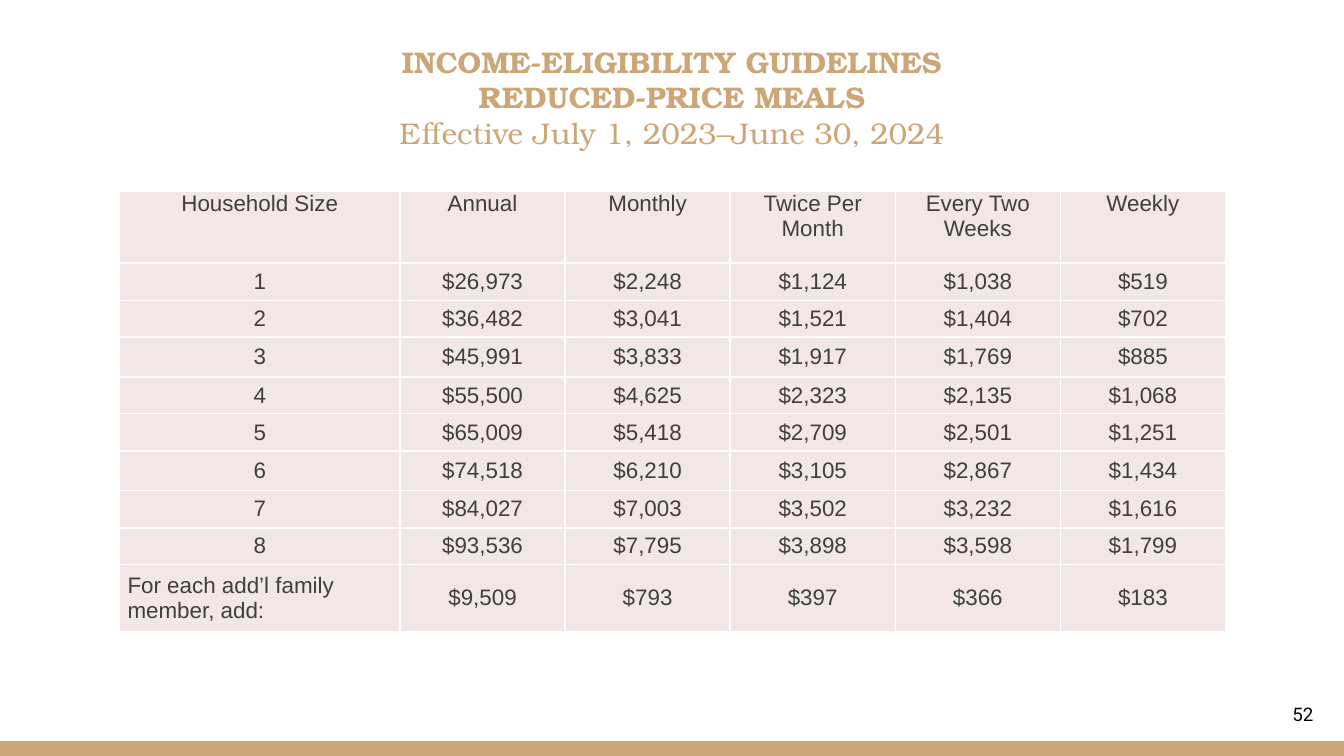
from lxml.etree import SubElement
from pptx import Presentation
from pptx.dml.color import RGBColor
from pptx.enum.shapes import MSO_SHAPE
from pptx.enum.text import MSO_ANCHOR, MSO_AUTO_SIZE, PP_ALIGN
from pptx.oxml.ns import qn
from pptx.util import Cm, Pt

GOLD, BLUSH, CHARCOAL, WHITE, BLACK = "CCA677", "F3E6E6", "3F3F3F", "FFFFFF", "000000"

TITLE = [
    ("INCOME-ELIGIBILITY GUIDELINES", True),
    ("REDUCED-PRICE MEALS", True),
    ("Effective July 1, 2023–June 30, 2024", False),
]
GUIDELINES = [
    ["Household Size", "Annual", "Monthly", "Twice Per Month", "Every Two Weeks", "Weekly"],
    ["1", "$26,973", "$2,248", "$1,124", "$1,038", "$519"],
    ["2", "$36,482", "$3,041", "$1,521", "$1,404", "$702"],
    ["3", "$45,991", "$3,833", "$1,917", "$1,769", "$885"],
    ["4", "$55,500", "$4,625", "$2,323", "$2,135", "$1,068"],
    ["5", "$65,009", "$5,418", "$2,709", "$2,501", "$1,251"],
    ["6", "$74,518", "$6,210", "$3,105", "$2,867", "$1,434"],
    ["7", "$84,027", "$7,003", "$3,502", "$3,232", "$1,616"],
    ["8", "$93,536", "$7,795", "$3,898", "$3,598", "$1,799"],
    ["For each add’l family member, add:", "$9,509", "$793", "$397", "$366", "$183"],
]
COLUMN_WIDTHS = [5.3] + [3.12] * 5
ROW_HEIGHTS = [1.35, 0.71, 0.69, 0.76, 0.69, 0.71, 0.74, 0.71, 0.69, 1.27]


def color(hex_string):
    return RGBColor.from_string(hex_string)


def style_paragraph(paragraph, font, size, hex_string, align, bold=False):
    paragraph.alignment = align
    paragraph.font.name = font
    paragraph.font.size = Pt(size)
    paragraph.font.bold = bold
    paragraph.font.color.rgb = color(hex_string)


def set_margins(holder, left, top, right, bottom):
    holder.margin_left, holder.margin_top = Cm(left), Cm(top)
    holder.margin_right, holder.margin_bottom = Cm(right), Cm(bottom)


def add_footer_band(slide, width):
    band = slide.shapes.add_shape(MSO_SHAPE.RECTANGLE, 0, Cm(14.01), width, Cm(0.28))
    band.shadow.inherit = False
    band.fill.solid()
    band.fill.fore_color.rgb = color(GOLD)
    band.line.fill.background()


def fill_title(slide):
    title = slide.shapes.title
    title.left, title.top, title.width, title.height = Cm(3.58), Cm(1.22), Cm(18.24), Cm(1.98)
    frame = title.text_frame
    frame.auto_size = MSO_AUTO_SIZE.NONE
    frame.word_wrap = True
    frame.vertical_anchor = MSO_ANCHOR.MIDDLE
    set_margins(frame, 0, 0.15, 0, 0.9)
    frame.text = "\n".join(line for line, _ in TITLE)
    for paragraph, (_, bold) in zip(frame.paragraphs, TITLE):
        style_paragraph(paragraph, "TeX Gyre Bonum", 16, GOLD, PP_ALIGN.CENTER, bold)


def add_cell_borders(cell, hex_string, width):
    properties = cell._tc.get_or_add_tcPr()
    for side in ("lnL", "lnR", "lnT", "lnB"):
        border = SubElement(properties, qn(f"a:{side}"), w=str(Pt(width)))
        SubElement(SubElement(border, qn("a:solidFill")), qn("a:srgbClr"), val=hex_string)


def format_cell(cell, text, anchor, align):
    cell.text = text
    cell.vertical_anchor = anchor
    set_margins(cell, 0.15, 0, 0.15, 0)
    style_paragraph(cell.text_frame.paragraphs[0], "Arial", 12, CHARCOAL, align)
    add_cell_borders(cell, WHITE, 1)
    cell.fill.solid()
    cell.fill.fore_color.rgb = color(BLUSH)


def add_guidelines_table(slide):
    table = slide.shapes.add_table(
        len(GUIDELINES), len(COLUMN_WIDTHS), Cm(2.26), Cm(3.62),
        Cm(sum(COLUMN_WIDTHS)), Cm(sum(ROW_HEIGHTS))).table
    table.first_row = table.horz_banding = False
    for column, width in zip(table.columns, COLUMN_WIDTHS):
        column.width = Cm(width)
    for row, height in zip(table.rows, ROW_HEIGHTS):
        row.height = Cm(height)
    last_row = len(GUIDELINES) - 1
    for r, values in enumerate(GUIDELINES):
        anchor = MSO_ANCHOR.MIDDLE if r else MSO_ANCHOR.TOP
        for c, value in enumerate(values):
            align = PP_ALIGN.LEFT if (r, c) == (last_row, 0) else PP_ALIGN.CENTER
            format_cell(table.cell(r, c), value, anchor, align)


def add_page_number(slide, number):
    frame = slide.shapes.add_textbox(Cm(23.55), Cm(12.95), Cm(1.52), Cm(1.09)).text_frame
    frame.word_wrap = True
    frame.vertical_anchor = MSO_ANCHOR.MIDDLE
    set_margins(frame, 0.25, 0.25, 0.25, 0.25)
    frame.text = number
    style_paragraph(frame.paragraphs[0], "Roboto", 10, BLACK, PP_ALIGN.RIGHT)


def main():
    presentation = Presentation()
    presentation.slide_width, presentation.slide_height = Cm(25.4), Cm(14.29)
    slide = presentation.slides.add_slide(presentation.slide_layouts[5])
    add_footer_band(slide, presentation.slide_width)
    add_guidelines_table(slide)
    fill_title(slide)
    add_page_number(slide, "52")
    presentation.save("out.pptx")


if __name__ == "__main__":
    main()
